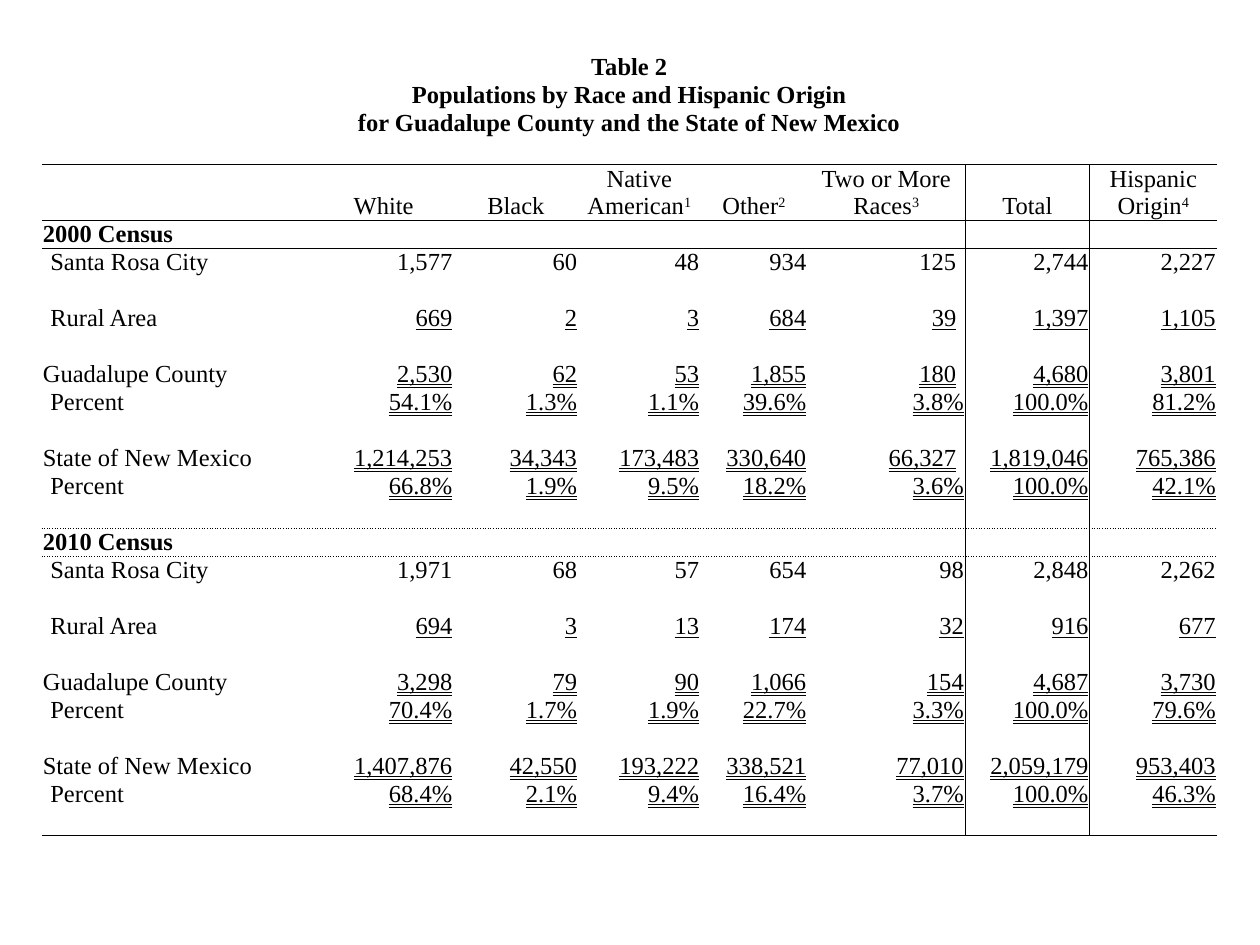
from lxml import etree
from pptx import Presentation
from pptx.dml.color import RGBColor
from pptx.enum.text import MSO_ANCHOR, MSO_UNDERLINE, PP_ALIGN
from pptx.oxml.ns import qn
from pptx.util import Inches, Pt

LEFT, CENTER, RIGHT = PP_ALIGN.LEFT, PP_ALIGN.CENTER, PP_ALIGN.RIGHT
BOTTOM = MSO_ANCHOR.BOTTOM
SINGLE, DOUBLE = MSO_UNDERLINE.SINGLE_LINE, MSO_UNDERLINE.DOUBLE_LINE
COLORS = {"ink": "000000"}
FONT = "Times New Roman"
NO_STYLE = "{2D5ABB26-0587-4C30-8999-92F81FD0307C}"

TITLES = [
    "Table 2",
    "Populations by Race and Hispanic Origin",
    "for Guadalupe County and the State of New Mexico",
]
# Column heading, footnote mark
HEADINGS = [
    ("White", ""), ("Black", ""), ("Native American", "1"), ("Other", "2"),
    ("Two or More Races", "3"), ("Total", ""), ("Hispanic Origin", "4"),
]
WIDTHS = [2.16, 1.11, 0.99, 0.97, 0.85, 1.25, 0.99, 1.01]
# Row offset within a census block, label, left inset, underline
LINES = [
    (1, "Santa Rosa City", 0.07, None),
    (3, "Rural Area", 0.07, SINGLE),
    (5, "Guadalupe County", 0.01, DOUBLE),
    (6, "Percent", 0.07, DOUBLE),
    (8, "State of New Mexico", 0.01, DOUBLE),
    (9, "Percent", 0.07, DOUBLE),
]
CENSUSES = [
    ("2000 Census", [
        "1,577 60 48 934 125 2,744 2,227",
        "669 2 3 684 39 1,397 1,105",
        "2,530 62 53 1,855 180 4,680 3,801",
        "54.1% 1.3% 1.1% 39.6% 3.8% 100.0% 81.2%",
        "1,214,253 34,343 173,483 330,640 66,327 1,819,046 765,386",
        "66.8% 1.9% 9.5% 18.2% 3.6% 100.0% 42.1%",
    ]),
    ("2010 Census", [
        "1,971 68 57 654 98 2,848 2,262",
        "694 3 13 174 32 916 677",
        "3,298 79 90 1,066 154 4,687 3,730",
        "70.4% 1.7% 1.9% 22.7% 3.3% 100.0% 79.6%",
        "1,407,876 42,550 193,222 338,521 77,010 2,059,179 953,403",
        "68.4% 2.1% 9.4% 16.4% 3.7% 100.0% 46.3%",
    ]),
]
HEADER, BODY, BLOCK = 4, 5, 11
ROWS, COLS = BODY + 2 * BLOCK, len(WIDTHS)
PLAIN_HEIGHT, HEADER_HEIGHT = 5.78, 0.44


def write(cell, text, align, bold=False, underline=None, mark=""):
    p = cell.text_frame.paragraphs[0]
    p.alignment = align
    for part in filter(None, (text, mark)):
        r = p.add_run()
        r.text = part
        formats = {"name": FONT, "size": Pt(14), "bold": bold, "underline": underline}
        for name, value in formats.items():
            setattr(r.font, name, value)
        r.font.color.rgb = RGBColor.from_string(COLORS["ink"])
    if mark:
        r.font._element.set("baseline", "30000")


def border(cell, side, dash="solid"):
    ln = etree.SubElement(cell._tc.get_or_add_tcPr(), qn(f"a:ln{side}"), w=str(Pt(0.5)))
    fill = etree.SubElement(ln, qn("a:solidFill"))
    etree.SubElement(fill, qn("a:srgbClr"), val=COLORS["ink"])
    etree.SubElement(ln, qn("a:prstDash"), val=dash)


prs = Presentation()
prs.slide_width, prs.slide_height = Inches(10), Inches(7.5)
s = prs.slides.add_slide(prs.slide_layouts[6])

# Table grid
sp = s.shapes.add_table(ROWS, COLS, Inches(0.33), Inches(0.42),
                        Inches(sum(WIDTHS)), Inches(PLAIN_HEIGHT + HEADER_HEIGHT))
table = sp.table
table.first_row = table.horz_banding = False
table._tbl.tblPr.find(qn("a:tableStyleId")).text = NO_STYLE
for column, width in zip(table.columns, WIDTHS):
    column.width = Inches(width)
for i, row in enumerate(table.rows):
    row.height = Inches(HEADER_HEIGHT if i == HEADER else PLAIN_HEIGHT / (ROWS - 1))

# Cell insets, rules and fill
rules = {HEADER: "solid", BODY: "solid", BODY + BLOCK: "sysDot", ROWS: "solid"}
for i in range(ROWS):
    for j in range(COLS):
        cell = table.cell(i, j)
        cell.vertical_anchor = BOTTOM
        cell.margin_left = cell.margin_right = Inches(0.01)
        cell.margin_top = cell.margin_bottom = 0
        if i >= HEADER and j in (6, 7):
            border(cell, "L")
        if i >= HEADER and j in (5, 6):
            border(cell, "R")
        if i in rules:
            border(cell, "T", rules[i])
        if i + 1 in rules:
            border(cell, "B", rules[i + 1])
        cell.fill.background()

# Title rows
for i, title in enumerate(TITLES):
    table.cell(i, 0).merge(table.cell(i, COLS - 1))
    write(table.cell(i, 0), title, CENTER, bold=True)

# Column headings
for j, (heading, mark) in enumerate(HEADINGS, 1):
    write(table.cell(HEADER, j), heading, CENTER, mark=mark)

# Census blocks
for block, (census, figures) in enumerate(CENSUSES):
    top = BODY + block * BLOCK
    write(table.cell(top, 0), census, LEFT, bold=True)
    for (offset, label, inset, underline), values in zip(LINES, figures):
        i = top + offset
        table.cell(i, 0).margin_left = Inches(inset)
        write(table.cell(i, 0), label, LEFT)
        for j, value in enumerate(values.split(), 1):
            write(table.cell(i, j), value, RIGHT, underline=underline)
        if block == 0 and label != "Percent":
            table.cell(i, 5).margin_right = Inches(0.07)

# Text size of the empty cells, so that their rows keep the set height
for cell in table.iter_cells():
    if not cell.text_frame.text:
        p = cell.text_frame.paragraphs[0]
        etree.SubElement(p._p, qn("a:endParaRPr"), sz="1200")

prs.save("out.pptx")
